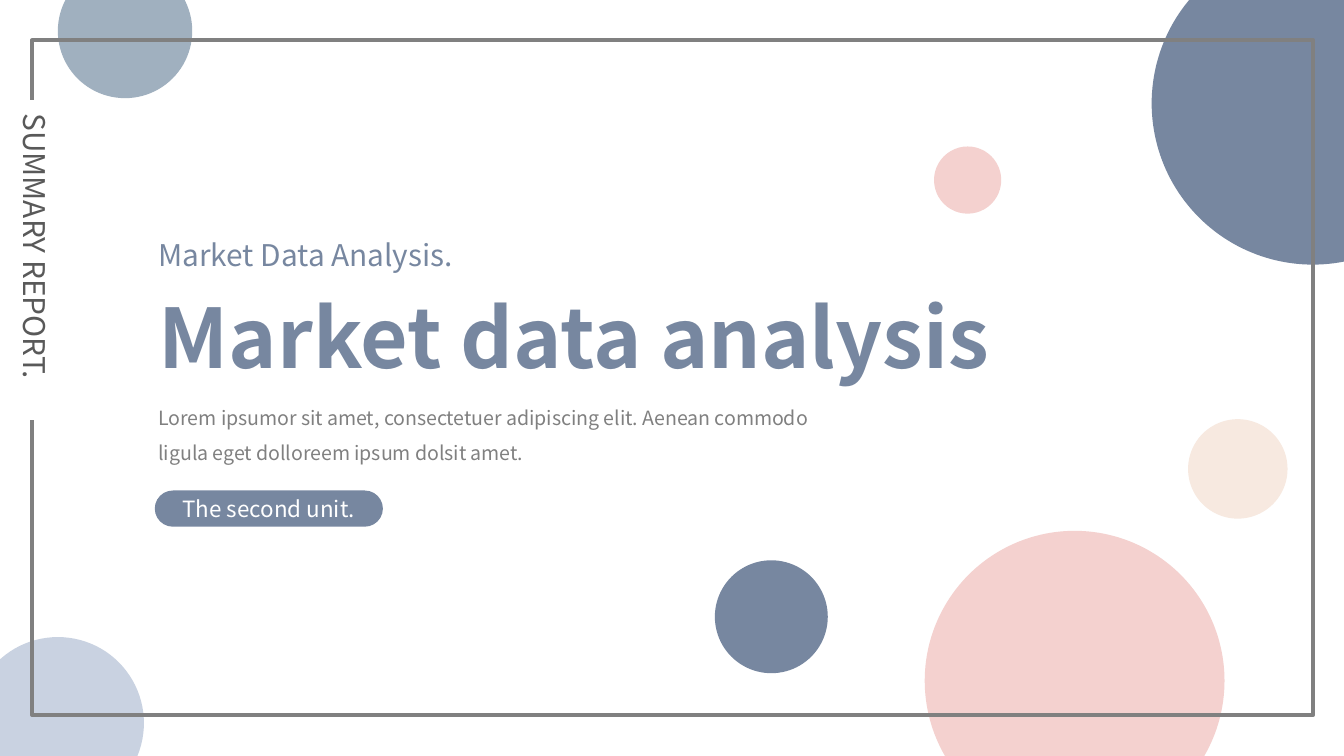
from pptx import Presentation
from pptx.dml.color import RGBColor
from pptx.enum.shapes import MSO_SHAPE
from pptx.enum.text import MSO_ANCHOR, MSO_AUTO_SIZE, PP_ALIGN
from pptx.util import Pt

OVAL = MSO_SHAPE.OVAL
RECTANGLE = MSO_SHAPE.RECTANGLE
ROUNDED = MSO_SHAPE.ROUNDED_RECTANGLE
TOP, MIDDLE = MSO_ANCHOR.TOP, MSO_ANCHOR.MIDDLE
LEFT, CENTER = PP_ALIGN.LEFT, PP_ALIGN.CENTER

FONT = "Noto Sans CJK SC"
SLATE, PINK, GRAY, WHITE = "7787A0", "F4D1CF", "808080", "FFFFFF"
TITLE_ONLY = 5
TEXT_LEFT = 77.8

CIRCLES = [
    (617, -31, 172.8, SLATE),
    (495.4, 284.4, 160.6, PINK),
    (636.5, 224.6, 53.3, "F7E9E0"),
    (31, -19.4, 72, "A0B0BF"),
    (-15.1, 341.3, 92.2, "C9D2E1"),
    (383, 300.2, 60.5, SLATE),
    (500.4, 78.5, 36, PINK),
]
FRAME = (17.3, 21.6, 686.2, 361.4)
SIDE_LABEL = ("SUMMARY REPORT.", (-67, 126, 171.4, 26.6))
TITLE = ("Market data analysis", (TEXT_LEFT, 149.8, 476.6, 60.5))
SUBTITLE = ("Market Data Analysis.", (TEXT_LEFT, 123.1, 440, 26.6))
DESCRIPTION = (
    "Lorem ipsumor sit amet, consectetuer adipiscing elit. "
    "Aenean commodo ligula eget dolloreem ipsum dolsit amet.",
    (TEXT_LEFT, 207.4, 382.3, 43.2),
)
UNIT_BADGE = ("The second unit.", (82.9, 262.8, 122.2, 19.4))


def color(hex_value):
    return RGBColor.from_string(hex_value)


def points(box):
    return [Pt(length) for length in box]


def add_filled_shape(slide, kind, box, fill):
    shape = slide.shapes.add_shape(kind, *points(box))
    shape.shadow.inherit = False
    shape.fill.solid()
    shape.fill.fore_color.rgb = color(fill)
    shape.line.fill.background()
    return shape


def write(shape, text, size, hex_value, bold=False, align=LEFT, anchor=TOP, spacing=1):
    frame = shape.text_frame
    frame.text = text
    frame.word_wrap = True
    frame.auto_size = MSO_AUTO_SIZE.NONE
    frame.vertical_anchor = anchor
    paragraph = frame.paragraphs[0]
    paragraph.alignment = align
    paragraph.line_spacing = spacing
    font = paragraph.runs[0].font
    font.name, font.size, font.bold = FONT, Pt(size), bold
    font.color.rgb = color(hex_value)


def main():
    presentation = Presentation()
    presentation.slide_width, presentation.slide_height = Pt(720), Pt(405)
    slide = presentation.slides.add_slide(presentation.slide_layouts[TITLE_ONLY])

    for left, top, diameter, fill in CIRCLES:
        add_filled_shape(slide, OVAL, (left, top, diameter, diameter), fill)

    frame = slide.shapes.add_shape(RECTANGLE, *points(FRAME))
    frame.shadow.inherit = False
    frame.fill.background()
    frame.line.color.rgb = color(GRAY)
    frame.line.width = Pt(2.25)

    text, box = SIDE_LABEL
    side_label = add_filled_shape(slide, RECTANGLE, box, WHITE)
    side_label.rotation = 90
    write(side_label, text, 16, "595959")

    text, box = TITLE
    title = slide.shapes.title
    title.left, title.top, title.width, title.height = points(box)
    write(title, text, 44, SLATE, bold=True)

    for (text, box), size, hex_value, spacing in (
        (SUBTITLE, 16, SLATE, 1),
        (DESCRIPTION, 10.5, GRAY, 1.5),
    ):
        text_box = slide.shapes.add_textbox(*points(box))
        write(text_box, text, size, hex_value, spacing=spacing)

    text, box = UNIT_BADGE
    badge = add_filled_shape(slide, ROUNDED, box, SLATE)
    badge.adjustments[0] = 0.5
    write(badge, text, 12, WHITE, align=CENTER, anchor=MIDDLE)

    presentation.save("out.pptx")


if __name__ == "__main__":
    main()
